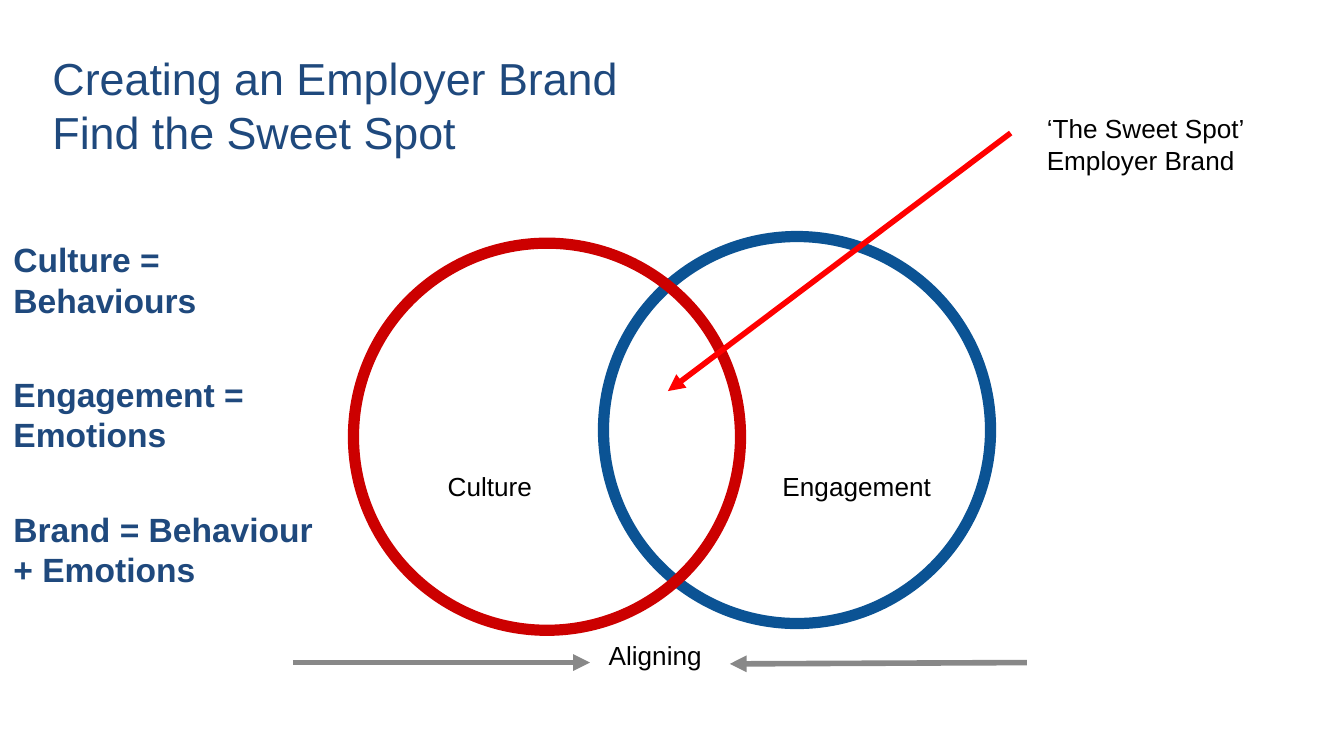
from pptx import Presentation
from pptx.dml.color import RGBColor
from pptx.enum.shapes import MSO_CONNECTOR, MSO_SHAPE
from pptx.enum.text import MSO_ANCHOR, MSO_AUTO_SIZE, PP_ALIGN
from pptx.oxml.ns import qn
from pptx.util import Inches, Pt
from lxml.etree import SubElement

HUES = {"navy": "1F497D", "blue": "0B5394", "crimson": "CC0000",
        "red": "FF0000", "grey": "888888", "black": "000000"}
FONT = "Arial"


def hue(name):
    return RGBColor.from_string(HUES[name])


def move(shape, box):
    shape.left, shape.top, shape.width, shape.height = map(Inches, box)


def write(shape, lines, size, color, bold=False, align=PP_ALIGN.LEFT, gap=0):
    """Fill a text frame, one paragraph a line, with gap points between."""
    frame = shape.text_frame
    frame.word_wrap = True
    frame.auto_size = MSO_AUTO_SIZE.NONE
    frame.vertical_anchor = MSO_ANCHOR.TOP
    frame.margin_left = frame.margin_right = Inches(0.1)
    frame.margin_top = frame.margin_bottom = Inches(0.1)
    frame.text = "\n".join(lines)
    for i, para in enumerate(frame.paragraphs):
        para.alignment = align
        para.space_before = Pt(gap if i else 0)
        props = para._p.get_or_add_pPr()
        props.set("marL", "0")
        props.set("indent", "0")
        SubElement(props, qn("a:buNone"))
        font = para.font
        font.name, font.size, font.bold = FONT, Pt(size), bold
        font.color.rgb = hue(color)


def label(slide, box, lines, align=PP_ALIGN.LEFT):
    text = slide.shapes.add_textbox(*map(Inches, box))
    write(text, lines, 14, "black", align=align)


def ring(slide, box, color):
    oval = slide.shapes.add_shape(MSO_SHAPE.OVAL, *map(Inches, box))
    oval.shadow.inherit = False
    oval.fill.background()
    oval.line.color.rgb = hue(color)
    oval.line.width = Pt(6)


def arrow(slide, start, end, color):
    link = slide.shapes.add_connector(
        MSO_CONNECTOR.STRAIGHT, *map(Inches, (*start, *end)))
    link.line.color.rgb = hue(color)
    link.line.width = Pt(3)
    SubElement(link.line._get_or_add_ln(), qn("a:tailEnd"), type="triangle")
    SubElement(link._element.spPr, qn("a:effectLst"))


def venn(slide, box):
    """Two equal rings at the sides of the box, each with its name."""
    x, y, w, h = box
    size = 2.88
    ring(slide, (x + w - size, y, size, size), "blue")
    ring(slide, (x, y + h - size, size, size), "crimson")
    for dx, name in ((0.27, "Culture"), (3, "Engagement")):
        label(slide, (x + dx, y + 1.64, 1.49, 0.48), [name], PP_ALIGN.CENTER)


def callout(slide, box, target):
    """Note at the right, with an arrow to the overlap."""
    x, y, w, h = box
    arrow(slide, (x - 0.17, y + 0.25), target, "red")
    label(slide, box, ["‘The Sweet Spot’", "Employer Brand"])


def align_bar(slide, box):
    """Arrows from both ends of the box towards the middle word."""
    x, y, w, h = box
    reach, base = 2.21, y + h
    arrow(slide, (x, base), (x + reach, base), "grey")
    arrow(slide, (x + w, base), (x + w - reach, base + 0.01), "grey")
    label(slide, (x + 2.25, y, 1.42, h), ["Aligning"])


def main():
    deck = Presentation()
    deck.slide_width = Inches(10)
    deck.slide_height = deck.slide_width * 9 // 16
    slide = deck.slides.add_slide(deck.slide_layouts[1])

    # Diagram
    venn(slide, (2.63, 1.76, 4.74, 2.93))
    callout(slide, (7.69, 0.74, 2.08, 0.53), (4.97, 2.91))
    align_bar(slide, (2.18, 4.66, 5.46, 0.27))

    # Title and definitions
    title, body = slide.shapes.title, slide.placeholders[1]
    move(title, (0.29, 0.28, 6.7, 0.79))
    write(title, ["Creating an Employer Brand", "Find the Sweet Spot"],
          24, "navy")
    move(body, (0, 1.68, 2.46, 2.01))
    write(body, ["Culture = Behaviours", "Engagement = Emotions",
                 "Brand = Behaviour + Emotions"],
          18, "navy", bold=True, gap=29)

    deck.save("out.pptx")


if __name__ == "__main__":
    main()
